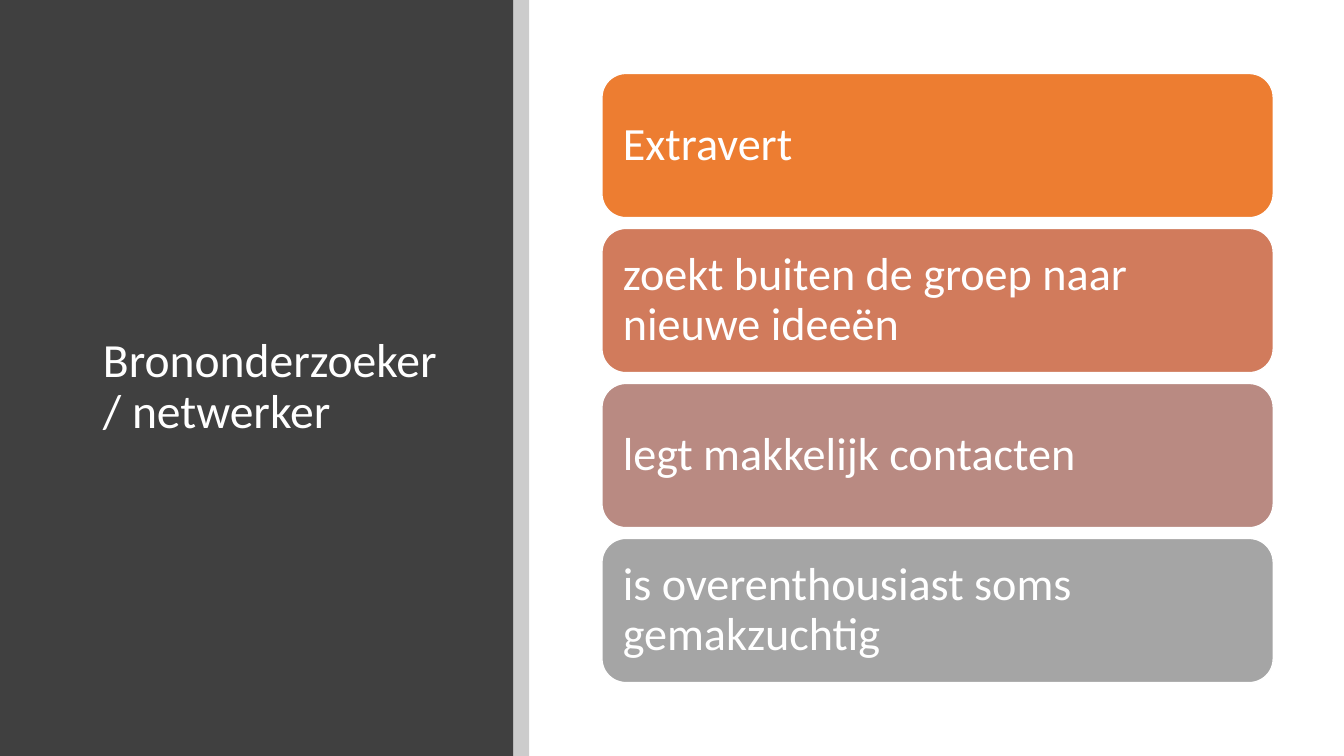
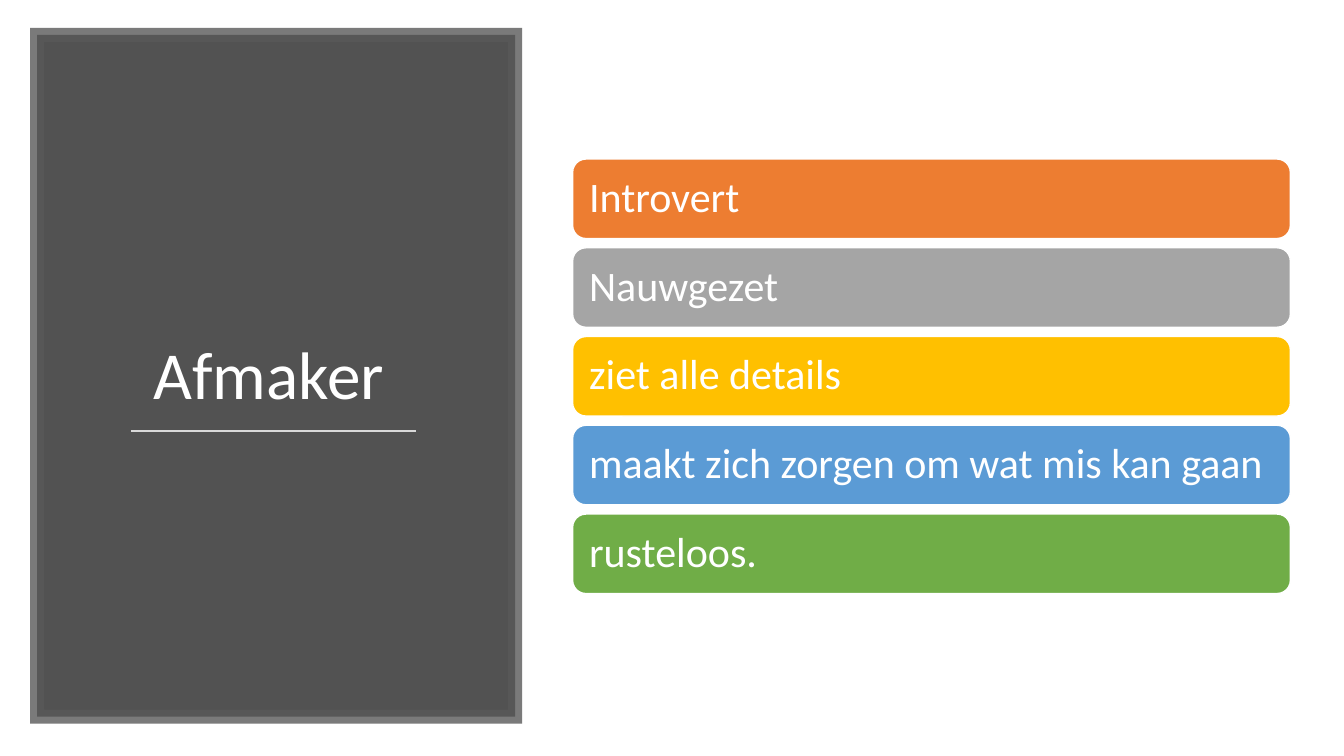
"""Build two team-role slides: a dark title panel beside a stack of rounded bars."""
import pptx
import pptx.dml.color
import pptx.enum.shapes
import pptx.enum.text
import pptx.oxml.ns
import pptx.util

Pt = pptx.util.Pt
RGBColor = pptx.dml.color.RGBColor
SHAPE = pptx.enum.shapes.MSO_SHAPE
ANCHOR = pptx.enum.text.MSO_ANCHOR
ALIGN = pptx.enum.text.PP_ALIGN
qn = pptx.oxml.ns.qn

FONT = "Calibri"
BLACK = RGBColor(0x00, 0x00, 0x00)
WHITE = RGBColor(0xFF, 0xFF, 0xFF)
DARK = RGBColor(0x40, 0x40, 0x40)
FRAME = RGBColor(0x59, 0x59, 0x59)
RULE = RGBColor(0xD9, 0xD9, 0xD9)
ORANGE = RGBColor(0xED, 0x7D, 0x31)
TERRACOTTA = RGBColor(0xD1, 0x7B, 0x5C)
ROSE = RGBColor(0xB9, 0x8A, 0x82)
GREY = RGBColor(0xA5, 0xA5, 0xA5)
GOLD = RGBColor(0xFF, 0xC0, 0x00)
BLUE = RGBColor(0x5B, 0x9B, 0xD5)
GREEN = RGBColor(0x70, 0xAD, 0x47)

SLIDE_WIDTH, SLIDE_HEIGHT = 960, 540
PANEL_WIDTH, STRIP_WIDTH = 366.5, 11.5

NETWORKER_TITLE = "Brononderzoeker/ netwerker"
NETWORKER_BARS = [
    ("Extravert", ORANGE),
    ("zoekt buiten de groep naar nieuwe ideeën", TERRACOTTA),
    ("legt makkelijk contacten", ROSE),
    ("is overenthousiast soms gemakzuchtig", GREY),
]
FINISHER_TITLE = "Afmaker "
FINISHER_BARS = [
    ("Introvert", ORANGE),
    ("Nauwgezet", GREY),
    ("ziet alle details", GOLD),
    ("maakt zich zorgen om wat mis kan gaan", BLUE),
    ("rusteloos.", GREEN),
]


def append_element(parent, tag, **attributes):
    parent.append(parent.makeelement(qn(tag), attributes))


def set_opacity(fill_parent, percent):
    color = fill_parent.find(qn("a:solidFill")).find(qn("a:srgbClr"))
    append_element(color, "a:alpha", val=str(percent * 1000))


def write_text(frame, text, size, anchor=ANCHOR.MIDDLE, align=ALIGN.LEFT):
    frame.word_wrap = True
    frame.vertical_anchor = anchor
    para = frame.paragraphs[0]
    para.alignment = align
    para.line_spacing = 0.9
    span = para.add_run()
    span.text = text
    span.font.name = FONT
    span.font.size = Pt(size)
    span.font.color.rgb = WHITE


def add_block(page, kind, bounds, color, opacity=100, line=None, line_width=1):
    block = page.shapes.add_shape(kind, *map(Pt, bounds))
    block.shadow.inherit = False
    block.fill.solid()
    block.fill.fore_color.rgb = color
    if opacity < 100:
        set_opacity(block._element.spPr, opacity)
    if line is None:
        block.line.fill.background()
    else:
        block.line.color.rgb = line
        block.line.width = Pt(line_width)
    return block


def add_title(page, text, bounds, size, **layout):
    box = page.shapes.add_textbox(*map(Pt, bounds))
    write_text(box.text_frame, text, size, **layout)


def add_bars(page, bars, left, top, width, height, pitch, size):
    for index, (text, color) in enumerate(bars):
        bounds = (left, top + index * pitch, width, height)
        bar = add_block(page, SHAPE.ROUNDED_RECTANGLE, bounds, color, line=WHITE)
        frame = bar.text_frame
        frame.margin_left = frame.margin_right = Pt(0.3 * size)
        frame.margin_top = frame.margin_bottom = Pt(0.3 * size)
        write_text(frame, text, size)


def add_frame_panel(page, bounds):
    panel = add_block(page, SHAPE.RECTANGLE, bounds, DARK, 90, FRAME, 10)
    outline = panel._element.spPr.find(qn("a:ln"))
    set_opacity(outline, 80)
    append_element(outline, "a:miter", lim="800000")


def add_rule(page, left, right, y):
    rule = page.shapes.add_connector(
        pptx.enum.shapes.MSO_CONNECTOR.STRAIGHT, Pt(left), Pt(y), Pt(right), Pt(y))
    rule.line.color.rgb = RULE
    rule.line.width = Pt(1.75)
    append_element(rule._element.spPr, "a:effectLst")


def build_networker(page):
    add_block(page, SHAPE.RECTANGLE, (0, 0, PANEL_WIDTH, SLIDE_HEIGHT), DARK)
    add_title(page, NETWORKER_TITLE, (66.5, 64, 262.5, 425.5), 34)
    add_block(page, SHAPE.RECTANGLE, (PANEL_WIDTH, 0, STRIP_WIDTH, SLIDE_HEIGHT), BLACK, 20)
    add_bars(page, NETWORKER_BARS, left=430, top=52.5, width=479.5,
             height=103, pitch=110.7, size=33)


def build_finisher(page):
    add_frame_panel(page, (26.5, 25, 341.5, 487))
    add_title(page, FINISHER_TITLE, (53.5, 72, 288, 227.5), 48,
              anchor=ANCHOR.BOTTOM, align=ALIGN.CENTER)
    add_rule(page, 93.5, 297.5, 308)
    add_bars(page, FINISHER_BARS, left=409, top=113.6, width=512.7,
             height=56.8, pitch=63.4, size=30)


def main():
    deck = pptx.Presentation()
    deck.slide_width, deck.slide_height = Pt(SLIDE_WIDTH), Pt(SLIDE_HEIGHT)
    for build in (build_networker, build_finisher):
        build(deck.slides.add_slide(deck.slide_layouts[6]))
    deck.save("out.pptx")


if __name__ == "__main__":
    main()
